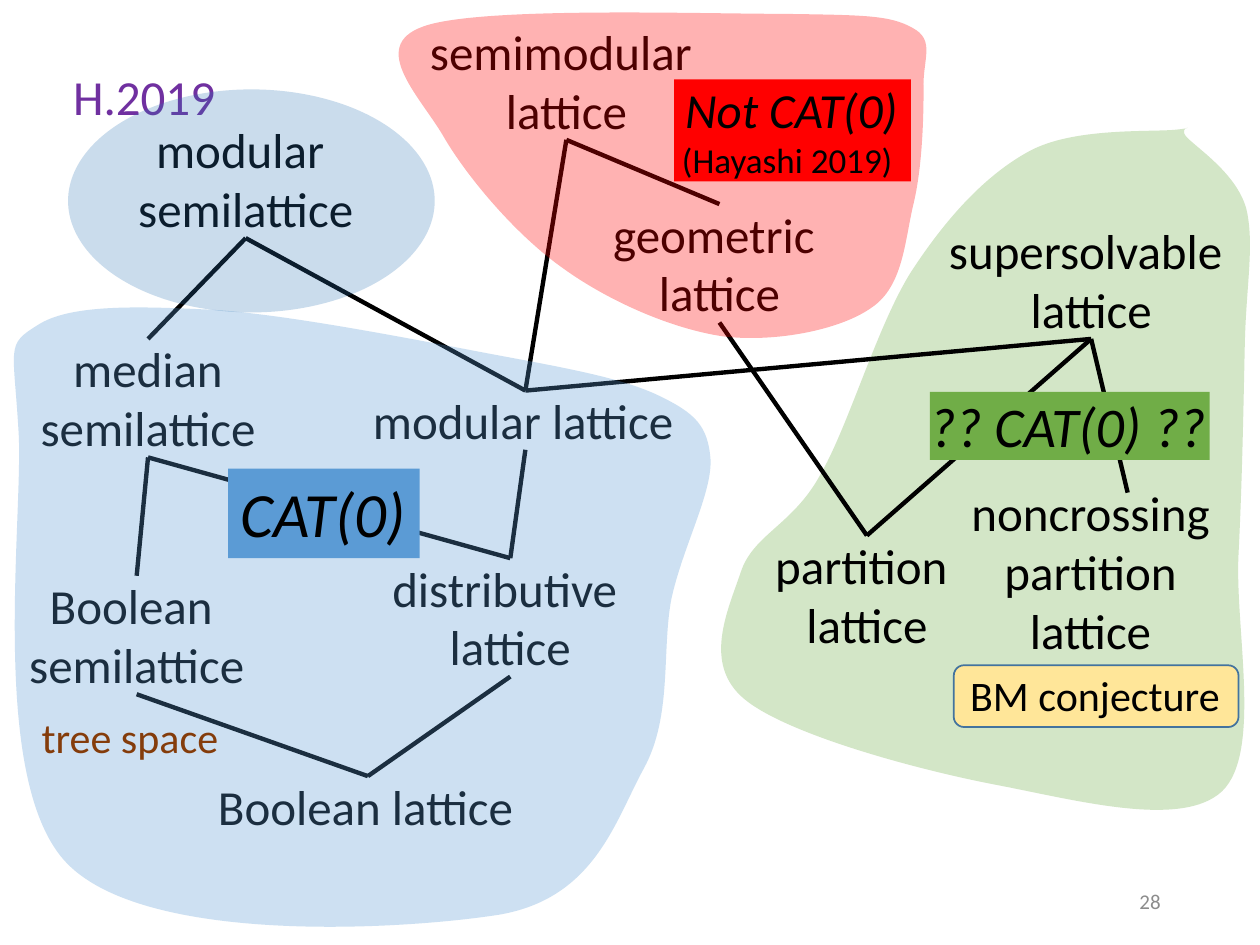
from lxml import etree
from pptx import Presentation
from pptx.dml.color import RGBColor
from pptx.enum.shapes import MSO_CONNECTOR, MSO_SHAPE
from pptx.enum.text import MSO_ANCHOR, PP_ALIGN
from pptx.oxml.ns import qn
from pptx.util import Inches, Pt

STRAIGHT = MSO_CONNECTOR.STRAIGHT
RECTANGLE = MSO_SHAPE.RECTANGLE
ROUNDED = MSO_SHAPE.ROUNDED_RECTANGLE
OVAL = MSO_SHAPE.OVAL
LEFT, CENTER, RIGHT = PP_ALIGN.LEFT, PP_ALIGN.CENTER, PP_ALIGN.RIGHT
TOP, MIDDLE = MSO_ANCHOR.TOP, MSO_ANCHOR.MIDDLE

FONT = "Calibri"
LINE_HEIGHT = 0.47
TOP_SITE, BOTTOM_SITE = 0, 2
COLORS = {
    "black": "000000", "white": "FFFFFF", "red": "FF0000", "blue": "5B9BD5",
    "deep blue": "2E75B6", "green": "70AD47", "yellow": "FFE699",
    "outline": "43739E", "purple": "7030A0", "brown": "843C0B", "gray": "8C8C8C",
}

NODES = {
    "boolean": ("Boolean lattice", 1.73, 6.16, 2.38),
    "distributive": ("distributive \nlattice", 3.1, 4.43, 1.9),
    "boolean semi": ("Boolean \nsemilattice", 0.22, 4.57, 1.73),
    "median semi": ("median\nsemilattice", 0.31, 2.69, 1.73),
    "modular": ("modular lattice", 2.96, 3.1, 2.42),
    "supersolvable": ("supersolvable \nlattice", 7.52, 1.75, 2.28),
    "semimodular": ("semimodular \nlattice", 3.4, 0.17, 2.19),
    "geometric": ("geometric \nlattice", 4.86, 1.62, 1.7),
    "partition": ("partition \nlattice", 6.14, 4.25, 1.48),
    "noncrossing": ("noncrossing\npartition\nlattice", 7.7, 3.83, 1.91),
    "modular semi": ("modular \nsemilattice", 1.08, 0.95, 1.74),
}
EDGES = [
    ("modular semi", "modular"), ("modular semi", "median semi"),
    ("modular", "distributive"), ("median semi", "boolean semi"),
    ("median semi", "distributive"), ("boolean semi", "boolean"),
    ("distributive", "boolean"), ("semimodular", "modular"),
    ("semimodular", "geometric"), ("supersolvable", "modular"),
    ("geometric", "partition"), ("supersolvable", "partition"),
]

GREEN_REGION = (5.73, 1.01, 4.2, 5.41), (9.33, 1.03), [
    (9.12, 1.05, 8.52, 1.01, 8.17, 1.2), (7.82, 1.39, 7.51, 1.73, 7.23, 2.16),
    (6.96, 2.59, 6.74, 3.37, 6.51, 3.77), (6.29, 4.17, 5.98, 4.24, 5.88, 4.54),
    (5.78, 4.84, 5.57, 5.27, 5.91, 5.55), (6.25, 5.83, 7.28, 6.11, 7.91, 6.23),
    (8.54, 6.35, 9.38, 6.58, 9.7, 6.28), (10.02, 5.97, 9.8, 4.99, 9.83, 4.4),
    (9.86, 3.81, 9.87, 3.19, 9.88, 2.73), (9.89, 2.27, 9.96, 1.93, 9.89, 1.65),
    (9.81, 1.38, 9.52, 1.19, 9.42, 1.09), (9.33, 0.99, 9.54, 1.01, 9.33, 1.03),
]
BLUE_REGION = (0.11, 2.44, 5.53, 4.92), (0.3, 2.58), [
    (0.56, 2.41, 1.11, 2.43, 1.71, 2.46), (2.31, 2.5, 3.32, 2.7, 3.9, 2.81),
    (4.49, 2.92, 4.94, 3, 5.23, 3.14), (5.52, 3.28, 5.62, 3.38, 5.64, 3.65),
    (5.65, 3.92, 5.42, 4.34, 5.33, 4.75), (5.25, 5.16, 5.34, 5.68, 5.11, 6.1),
    (4.88, 6.52, 4.72, 7.13, 3.96, 7.26), (3.19, 7.38, 1.18, 7.5, 0.54, 6.86),
    (-0.09, 6.23, 0.18, 4.18, 0.15, 3.46), (0.11, 2.74, 0.04, 2.74, 0.3, 2.58),
]
RED_REGION = (3.16, 0.1, 4.19, 2.58), (3.36, 0.21), [
    (2.91, 0.37, 3.35, 0.78, 3.53, 1.1), (3.72, 1.42, 4.1, 1.87, 4.47, 2.13),
    (4.83, 2.39, 5.33, 2.61, 5.74, 2.67), (6.15, 2.72, 6.67, 2.62, 6.92, 2.44),
    (7.17, 2.27, 7.18, 1.91, 7.25, 1.62), (7.32, 1.33, 7.33, 0.94, 7.33, 0.71),
    (7.32, 0.47, 7.43, 0.32, 7.24, 0.22), (7.06, 0.12, 6.86, 0.12, 6.21, 0.11),
    (5.55, 0.11, 3.8, 0.05, 3.36, 0.21),
]


def rgb(name):
    return RGBColor.from_string(COLORS[name])


def style_shape(shape, fill, opacity=100, line=None):
    shape.shadow.inherit = False
    shape.fill.solid()
    shape.fill.fore_color.rgb = rgb(fill)
    if opacity < 100:
        color = shape._element.spPr.find(qn("a:solidFill"))[0]
        etree.SubElement(color, qn("a:alpha"), val=str(opacity * 1000))
    if line:
        shape.line.color.rgb = rgb(line)
        shape.line.width = Pt(1)
    else:
        shape.line.fill.background()


def add_box(slide, kind, left, top, width, height, fill, **style):
    shape = slide.shapes.add_shape(
        kind, Inches(left), Inches(top), Inches(width), Inches(height))
    style_shape(shape, fill, **style)
    return shape


def write_text(shape, text, sizes=(28,), italics=(False,), color="black",
               align=LEFT, anchor=TOP, margins=(0, 0), wrap=False):
    frame = shape.text_frame
    frame.word_wrap = wrap
    frame.vertical_anchor = anchor
    frame.margin_left = frame.margin_right = Inches(margins[0])
    frame.margin_top = frame.margin_bottom = Inches(margins[1])
    for index, line in enumerate(text.split("\n")):
        paragraph = frame.paragraphs[0] if index == 0 else frame.add_paragraph()
        paragraph.alignment = align
        run = paragraph.add_run()
        run.text = line
        run.font.name = FONT
        run.font.size = Pt(sizes[min(index, len(sizes) - 1)])
        run.font.italic = italics[min(index, len(italics) - 1)]
        run.font.color.rgb = rgb(color)


def add_label(slide, text, left, top, width, height=LINE_HEIGHT, **text_format):
    label = slide.shapes.add_textbox(
        Inches(left), Inches(top), Inches(width), Inches(height))
    write_text(label, text, **text_format)
    return label


def add_node(slide, text, left, top, width):
    line_count = len(text.split("\n"))
    align = CENTER if line_count > 1 else LEFT
    return add_label(slide, text, left, top, width, LINE_HEIGHT * line_count, align=align)


def add_edge(slide, upper, lower=None, end=(0, 0)):
    edge = slide.shapes.add_connector(STRAIGHT, 0, 0, Inches(end[0]), Inches(end[1]))
    edge.begin_connect(upper, BOTTOM_SITE)
    if lower is not None:
        edge.end_connect(lower, TOP_SITE)
    edge.line.color.rgb = rgb("black")
    edge.line.width = Pt(2.5)
    etree.SubElement(edge._element.spPr, qn("a:effectLst"))


def add_region(slide, region, fill):
    (left, top, width, height), start, curves = region
    builder = slide.shapes.build_freeform(Inches(start[0]), Inches(start[1]))
    builder.add_line_segments([(Inches(x), Inches(y)) for *_, x, y in curves])
    shape = builder.convert_to_shape()
    shape.left, shape.top = Inches(left), Inches(top)
    shape.width, shape.height = Inches(width), Inches(height)

    outline = next(shape._element.iter(qn("a:path")))
    outline.clear()
    outline.set("w", str(shape.width))
    outline.set("h", str(shape.height))
    segments = [("a:moveTo", start)] + [("a:cubicBezTo", curve) for curve in curves]
    for tag, numbers in segments:
        segment = etree.SubElement(outline, qn(tag))
        for x, y in zip(numbers[::2], numbers[1::2]):
            etree.SubElement(segment, qn("a:pt"),
                             x=str(Inches(x) - shape.left), y=str(Inches(y) - shape.top))
    etree.SubElement(outline, qn("a:close"))
    style_shape(shape, fill, opacity=30)


def main():
    presentation = Presentation()
    presentation.slide_width = Inches(10)
    presentation.slide_height = Inches(7.5)
    slide = presentation.slides.add_slide(presentation.slide_layouts[6])

    add_region(slide, GREEN_REGION, "green")
    nodes = {name: add_node(slide, *node) for name, node in NODES.items()}
    style_shape(nodes["modular semi"], "white")
    for upper, lower in EDGES:
        add_edge(slide, nodes[upper], nodes[lower])
    add_edge(slide, nodes["supersolvable"], end=(8.95, 3.91))
    add_region(slide, BLUE_REGION, "blue")
    add_region(slide, RED_REGION, "red")

    not_cat = add_box(slide, RECTANGLE, 5.35, 0.63, 1.88, 0.81, "red")
    write_text(not_cat, " Not CAT(0)\n (Hayashi 2019)", sizes=(28, 20), italics=(True, False))
    cat = add_box(slide, RECTANGLE, 1.81, 3.72, 1.52, 0.71, "blue")
    write_text(cat, "CAT(0)", sizes=(36,), italics=(True,), margins=(0.1, 0.05))
    open_cat = add_box(slide, RECTANGLE, 7.38, 3.11, 2.22, 0.54, "green")
    write_text(open_cat, "?? CAT(0) ??", sizes=(32,), italics=(True,))

    add_label(slide, "28", 7.06, 6.95, 2.25, 0.4, sizes=(12,), color="gray",
              align=RIGHT, anchor=MIDDLE, margins=(0.1, 0.05), wrap=True)
    add_box(slide, ROUNDED, 7.57, 5.28, 2.26, 0.49, "yellow", line="outline")
    add_label(slide, "BM conjecture", 7.7, 5.31, 2, 0.4, sizes=(24,))
    add_label(slide, "H.2019", 0.58, 0.53, 1.14, color="purple")
    add_box(slide, OVAL, 0.54, 0.71, 2.91, 1.77, "deep blue", opacity=25)
    add_label(slide, "tree space", 0.33, 5.65, 1.42, 0.4, sizes=(24,), color="brown")

    presentation.save("out.pptx")


if __name__ == "__main__":
    main()
